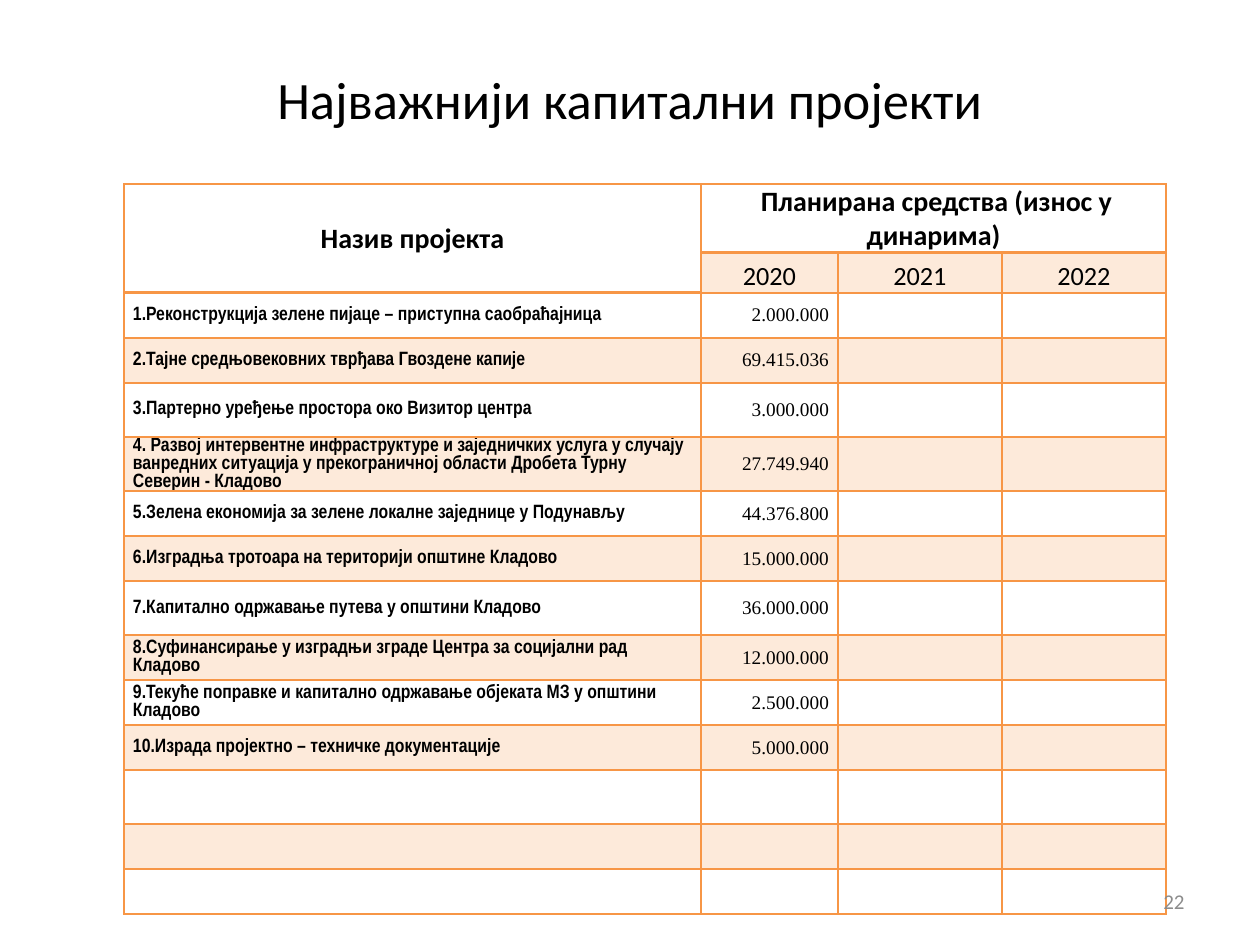
from lxml.etree import SubElement
from pptx import Presentation
from pptx.dml.color import RGBColor
from pptx.enum.text import MSO_ANCHOR, PP_ALIGN
from pptx.oxml.ns import qn
from pptx.util import Pt

EMU_PER_PIXEL = 914400 / 126
ORANGE = "F79646"
COLUMNS = [577, 137, 164, 164]
ROWS = [69, 40, 45, 45, 54, 54, 45, 45, 54, 45, 45, 45, 54, 45, 45]
YEARS = ["2020", "2021", "2022"]
PROJECTS = [
    ("1.Реконструкција зелене пијаце – приступна саобраћајница", "2.000.000"),
    ("2.Тајне средњовековних тврђава Гвоздене капије", "69.415.036"),
    ("3.Партерно уређење простора око Визитор центра", "3.000.000"),
    ("4. Развој интервентне инфраструктуре и заједничких услуга у случају "
     "ванредних ситуација у прекограничној области Дробета Турну Северин - Кладово", "27.749.940"),
    ("5.Зелена економија за зелене локалне заједнице у Подунављу", "44.376.800"),
    ("6.Изградња тротоара на територији општине Кладово", "15.000.000"),
    ("7.Капитално одржавање путева у општини Кладово", "36.000.000"),
    ("8.Суфинансирање у изградњи зграде Центра за социјални рад Кладово", "12.000.000"),
    ("9.Текуће поправке и капитално одржавање објеката МЗ у општини Кладово", "2.500.000"),
    ("10.Израда пројектно – техничке документације", "5.000.000"),
]

TITLE = dict(name="Calibri", size=30, bold=False, color="000000", align=PP_ALIGN.CENTER)
HEADING = dict(TITLE, size=16, bold=True)
YEAR = dict(TITLE, size=15)
PROJECT = dict(name="Arial Narrow", size=11, bold=True, color="000000", align=PP_ALIGN.LEFT)
AMOUNT = dict(name="Times New Roman", size=11, bold=False, color="000000", align=PP_ALIGN.RIGHT)
PAGE_NUMBER = dict(TITLE, size=12, color="8C8C8C", align=PP_ALIGN.RIGHT)


def px(length):
    return round(length * EMU_PER_PIXEL)


def rgb(value):
    return RGBColor.from_string(value)


class SlideBuilder:
    def __init__(self, page):
        self.page = page

    def fill_text(self, frame, text, style):
        frame.word_wrap = True
        para = frame.paragraphs[0]
        para.alignment = style["align"]
        span = para.add_run()
        span.text = text
        span.font.color.rgb = rgb(style["color"])
        span.font.size = Pt(style["size"])
        for key in ("name", "bold"):
            setattr(span.font, key, style[key])

    def place(self, box, left, top, width, height):
        bounds = dict(left=left, top=top, width=width, height=height)
        for key, value in bounds.items():
            setattr(box, key, px(value))

    def title(self, text, *bounds):
        box = self.page.shapes.title
        self.place(box, *bounds)
        box.text_frame.vertical_anchor = MSO_ANCHOR.MIDDLE
        self.fill_text(box.text_frame, text, TITLE)

    def text(self, text, style, *bounds):
        box = self.page.shapes.add_textbox(*map(px, bounds))
        box.text_frame.vertical_anchor = MSO_ANCHOR.MIDDLE
        self.fill_text(box.text_frame, text, style)

    def table(self, left, top, columns, rows):
        """Add a plain grid of the given column widths and row heights."""
        frame = self.page.shapes.add_table(
            len(rows), len(columns), px(left), px(top), px(sum(columns)), px(sum(rows)))
        grid = frame.table
        grid.first_row = grid.horz_banding = False
        for column, width in zip(grid.columns, columns):
            column.width = px(width)
        for row, height in zip(grid.rows, rows):
            row.height = px(height)
        return grid

    def cell(self, cell, tinted=False, bottom=1):
        """Set margins, borders and fill of one cell; borders must precede the fill."""
        margins = dict(margin_left=px(9), margin_right=px(9), margin_top=0, margin_bottom=0)
        for key, value in margins.items():
            setattr(cell, key, value)
        properties = cell._tc.get_or_add_tcPr()
        for side, points in dict(lnL=1, lnR=1, lnT=1, lnB=bottom).items():
            line = SubElement(properties, qn(f"a:{side}"), w=str(Pt(points)))
            SubElement(SubElement(line, qn("a:solidFill")), qn("a:srgbClr"), val=ORANGE)
        if tinted:
            cell.fill.solid()
            cell.fill.fore_color.rgb = rgb(ORANGE)
            color = properties.find(qn("a:solidFill")).find(qn("a:srgbClr"))
            SubElement(color, qn("a:alpha"), val="20000")
        else:
            cell.fill.background()

    def cell_text(self, cell, text, style, anchor=MSO_ANCHOR.MIDDLE):
        cell.vertical_anchor = anchor
        self.fill_text(cell.text_frame, text, style)


def main():
    deck = Presentation()
    deck.slide_width, deck.slide_height = px(1260), px(945)
    builder = SlideBuilder(deck.slides.add_slide(deck.slide_layouts[5]))

    grid = builder.table(124, 184, COLUMNS, ROWS)
    for row in range(len(ROWS)):
        for column in range(len(COLUMNS)):
            heading = row == 0 or (row == 1 and column == 0)
            builder.cell(grid.cell(row, column), tinted=row % 2 == 1 and not heading,
                         bottom=2 if heading else 1)
    grid.cell(0, 0).merge(grid.cell(1, 0))
    grid.cell(0, 1).merge(grid.cell(0, 3))

    builder.cell_text(grid.cell(0, 0), "Назив пројекта", HEADING)
    builder.cell_text(grid.cell(0, 1), " Планирана средства (износ у динарима)",
                      HEADING, MSO_ANCHOR.BOTTOM)
    for column, year in enumerate(YEARS, 1):
        builder.cell_text(grid.cell(1, column), year, YEAR, MSO_ANCHOR.BOTTOM)
    for row, (project, amount) in enumerate(PROJECTS, 2):
        builder.cell_text(grid.cell(row, 0), project, PROJECT)
        builder.cell_text(grid.cell(row, 1), amount, AMOUNT)

    builder.text("22", PAGE_NUMBER, 903, 876, 294, 50)
    builder.title("Најважнији капитални пројекти", 63, 38, 1134, 121)
    deck.save("out.pptx")


if __name__ == "__main__":
    main()
